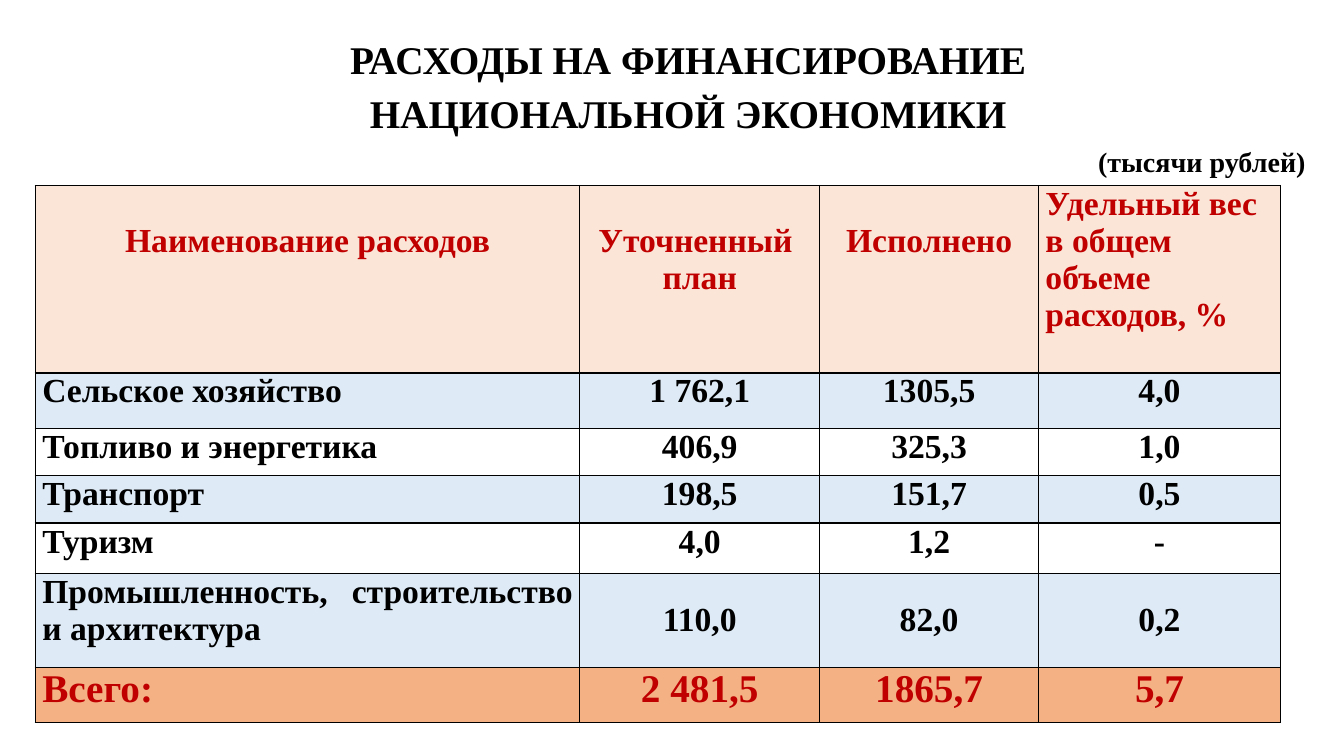
from lxml import etree
from pptx import Presentation
from pptx.dml.color import RGBColor
from pptx.enum.text import MSO_ANCHOR, MSO_AUTO_SIZE, PP_ALIGN
from pptx.oxml.ns import qn
from pptx.util import Inches, Pt

LEFT, CENTER, RIGHT, JUSTIFY = PP_ALIGN.LEFT, PP_ALIGN.CENTER, PP_ALIGN.RIGHT, PP_ALIGN.JUSTIFY
TOP, MIDDLE = MSO_ANCHOR.TOP, MSO_ANCHOR.MIDDLE

BLACK = RGBColor(0x00, 0x00, 0x00)
WHITE = RGBColor(0xFF, 0xFF, 0xFF)
RED = RGBColor(0xC0, 0x00, 0x00)
PEACH = RGBColor(0xFB, 0xE5, 0xD6)
PALE_BLUE = RGBColor(0xDE, 0xEB, 0xF7)
ORANGE = RGBColor(0xF4, 0xB1, 0x83)

FONT = "Times New Roman"
TITLE_BOX = (0.41, 0.28, 12.83, 1.52)
TABLE_BOX = (0.35, 1.84, 12.35, 5.33)
COLUMN_WIDTHS = [5.4, 2.38, 2.17, 2.4]
ROW_HEIGHTS = [1.86, 0.55, 0.47, 0.47, 0.5, 0.93, 0.55]

TITLE_LINES = ["РАСХОДЫ НА ФИНАНСИРОВАНИЕ", "НАЦИОНАЛЬНОЙ ЭКОНОМИКИ"]
UNITS = "(тысячи рублей)"
HEADER = ["Наименование расходов", "Уточненный \nплан", "Исполнено",
          "Удельный вес в общем объеме расходов, %"]
EXPENSES = [
    ["Сельское хозяйство", "1 762,1", "1305,5", "4,0"],
    ["Топливо и энергетика", "406,9", "325,3", "1,0"],
    ["Транспорт", "198,5", "151,7", "0,5"],
    ["Туризм", "4,0", "1,2", "-"],
    ["Промышленность, строительство и архитектура", "110,0", "82,0", "0,2"],
]
TOTAL = ["Всего:", "2 481,5", "1865,7", "5,7"]


def set_all(target, values):
    for name, value in values.items():
        setattr(target, name, value)


def style_paragraph(paragraph, size, color, align):
    paragraph.alignment = align
    set_all(paragraph.font, {"name": FONT, "size": Pt(size), "bold": True})
    paragraph.font.color.rgb = color
    for run in paragraph.runs:
        set_all(run.font, {"name": FONT, "size": Pt(size), "bold": True})
        run.font.color.rgb = color


def add_title(slide, box):
    title = slide.shapes.title
    left, top, width, height = map(Inches, box)
    set_all(title, {"left": left, "top": top, "width": width, "height": height})
    frame = title.text_frame
    set_all(frame, {"word_wrap": True, "auto_size": MSO_AUTO_SIZE.NONE,
                    "vertical_anchor": TOP, "margin_top": 0, "margin_bottom": 0,
                    "margin_left": Inches(0.29), "margin_right": Inches(0.29)})
    frame.text = "\n".join(TITLE_LINES + [UNITS])
    *headings, units = frame.paragraphs
    for heading in headings:
        style_paragraph(heading, 28, BLACK, CENTER)
    style_paragraph(units, 20, BLACK, RIGHT)
    for paragraph in frame.paragraphs:
        paragraph.line_spacing = 1.15
    # The units line ends clear of the table's top edge
    units.space_before = Pt(2)


def add_borders(cell):
    properties = cell._tc.get_or_add_tcPr()
    for position, side in enumerate(("lnL", "lnR", "lnT", "lnB")):
        line = etree.Element(qn(f"a:{side}"), w=str(Pt(1)))
        fill = etree.SubElement(line, qn("a:solidFill"))
        etree.SubElement(fill, qn("a:srgbClr"), val=str(BLACK))
        properties.insert(position, line)


def fill_row(row, texts, fill, size, color, aligns, anchors, top_margins):
    for cell, text, align, anchor, margin in zip(row.cells, texts, aligns, anchors, top_margins):
        cell.text = text
        set_all(cell, {"margin_left": Inches(0.07), "margin_right": Inches(0.07),
                       "margin_top": Inches(margin), "margin_bottom": 0,
                       "vertical_anchor": anchor})
        cell.fill.solid()
        cell.fill.fore_color.rgb = fill
        for paragraph in cell.text_frame.paragraphs:
            style_paragraph(paragraph, size, color, align)
        add_borders(cell)


def add_expense_table(slide, box):
    table = slide.shapes.add_table(len(ROW_HEIGHTS), len(COLUMN_WIDTHS),
                                   *map(Inches, box)).table
    for column, width in zip(table.columns, COLUMN_WIDTHS):
        column.width = Inches(width)
    for row, height in zip(table.rows, ROW_HEIGHTS):
        row.height = Inches(height)
    header, *body, total = table.rows
    flush = [0] * 4

    # Header: the short labels start one line lower than the long one
    fill_row(header, HEADER, PEACH, 24, RED, [CENTER] * 3 + [LEFT],
             [TOP] * 4, [0.37] * 3 + [0])

    # Expense lines, banded; figures are centred beside a two-line name
    for index, (row, texts) in enumerate(zip(body, EXPENSES)):
        value_anchor = MIDDLE if row is body[-1] else TOP
        fill_row(row, texts, WHITE if index % 2 else PALE_BLUE, 24, BLACK,
                 [JUSTIFY] + [CENTER] * 3, [TOP] + [value_anchor] * 3, flush)

    # Total
    fill_row(total, TOTAL, ORANGE, 28, RED, [LEFT] + [CENTER] * 3, [TOP] * 4, flush)


def main():
    deck = Presentation()
    set_all(deck, {"slide_width": Inches(13.33), "slide_height": Inches(7.5)})
    slide = deck.slides.add_slide(deck.slide_layouts.get_by_name("Title Only"))
    add_title(slide, TITLE_BOX)
    add_expense_table(slide, TABLE_BOX)
    deck.save("out.pptx")


if __name__ == "__main__":
    main()
